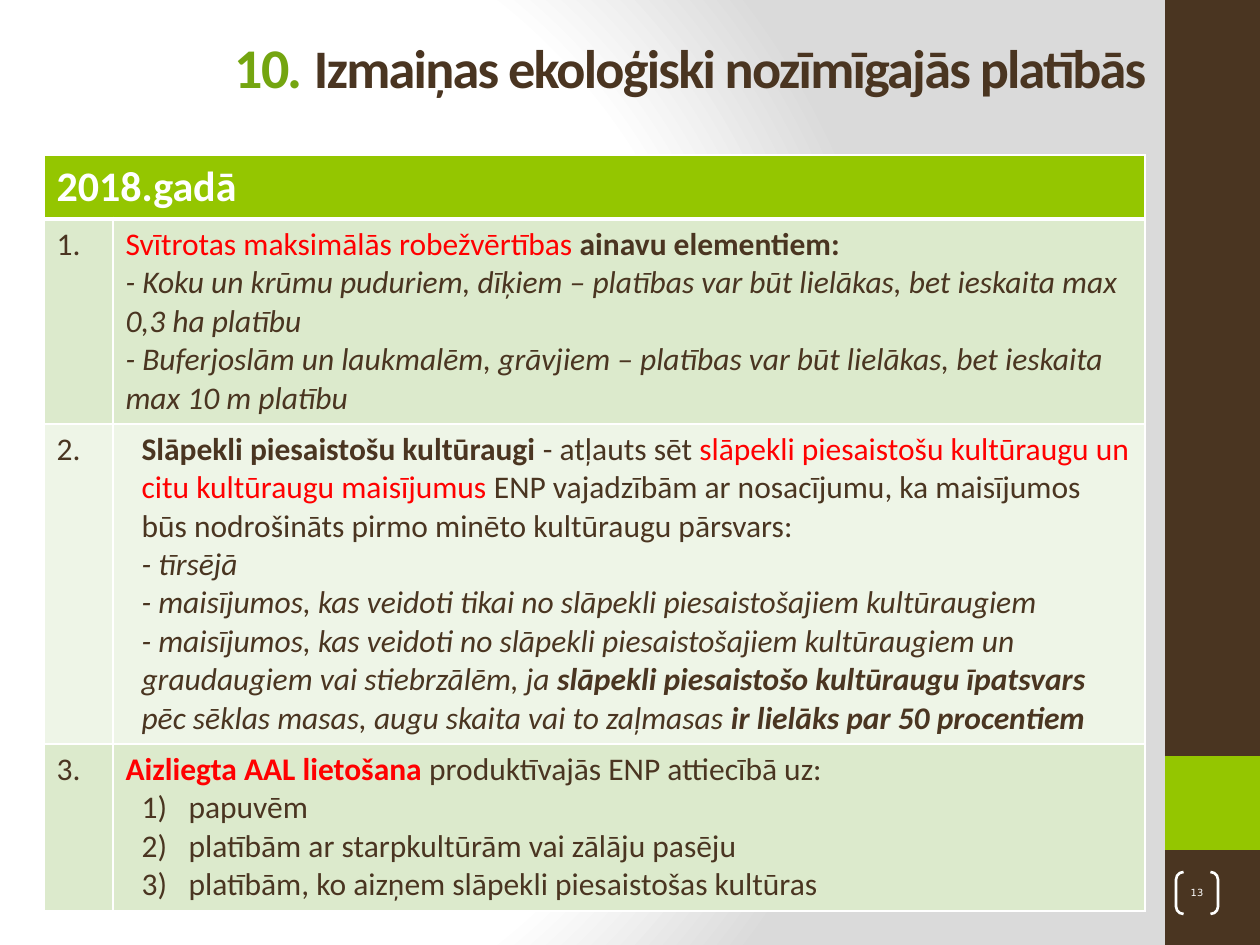
import pptx
import pptx.util
import pptx.oxml
import pptx.oxml.ns
import pptx.dml.color
import pptx.enum.shapes
import pptx.enum.text

HUES = {"brown": "4A3521", "lime": "94C600", "green": "74A510", "white": "FFFFFF",
        "red": "FF0000", "leaf": "DCEACC", "mist": "EEF5E7", "grey": "DADADA"}
FONT = "Calibri"
SCALE = 914400 / 126
SPACE = 'xmlns:a="http://schemas.openxmlformats.org/drawingml/2006/main"'
SHAPE = pptx.enum.shapes.MSO_SHAPE
ALIGN = pptx.enum.text.PP_ALIGN
ANCHOR = pptx.enum.text.MSO_ANCHOR


def px(n):
    return pptx.util.Emu(round(n * SCALE))


def rgb(name):
    return pptx.dml.color.RGBColor.from_string(HUES[name])


def parse(text):
    return pptx.oxml.parse_xml(text)


class Page:
    def __init__(self, deck):
        self.slide = deck.slides.add_slide(deck.slide_layouts[5])
        self.shapes = self.slide.shapes

    def ground(self, stops):
        self.slide.background.fill.solid()
        holder = self.slide.element.find(".//" + pptx.oxml.ns.qn("p:bgPr"))
        marks = "".join(f'<a:gs pos="{at * 1000}"><a:srgbClr val="{HUES[hue]}"/></a:gs>'
                        for at, hue in stops)
        fill = parse(f'<a:gradFill {SPACE} rotWithShape="1"><a:gsLst>{marks}</a:gsLst>'
                     '<a:path path="circle"><a:fillToRect l="20000" t="50000" '
                     'r="100000" b="50000"/></a:path></a:gradFill>')
        holder.replace(holder[0], fill)

    def run(self, para, text, hue="brown", size=18, style="", font=FONT):
        piece = para.add_run()
        piece.text = text
        face = piece.font
        face.name, face.size = font, pptx.util.Pt(size)
        face.bold, face.italic = "b" in style, "i" in style
        face.color.rgb = rgb(hue)
        return piece

    def block(self, box, hue):
        shape = self.shapes.add_shape(SHAPE.RECTANGLE, *map(px, box))
        shape.shadow.inherit = False
        shape.fill.solid()
        shape.fill.fore_color.rgb = rgb(hue)
        shape.line.fill.background()

    def badge(self, box, text):
        shape = self.shapes.add_shape(SHAPE.DOUBLE_BRACKET, *map(px, box))
        shape.shadow.inherit = False
        shape.adjustments[0] = 0.18
        shape.fill.background()
        shape.line.color.rgb = rgb("white")
        shape.line.width = pptx.util.Pt(1.5)
        frame = shape.text_frame
        frame.margin_left = frame.margin_right = 0
        frame.margin_top = frame.margin_bottom = 0
        frame.vertical_anchor = ANCHOR.MIDDLE
        para = frame.paragraphs[0]
        para.alignment = ALIGN.CENTER
        self.run(para, text, "white", 5.6, font="DejaVu Sans")

    def title(self, box, runs):
        shape = self.shapes.title
        shape.left, shape.top, shape.width, shape.height = map(px, box)
        frame = shape.text_frame
        frame.word_wrap = True
        frame.vertical_anchor = ANCHOR.TOP
        para = frame.paragraphs[0]
        para.alignment = ALIGN.LEFT
        for text, hue, size in runs:
            piece = self.run(para, text, hue, size, "b")
            piece.font._element.set("spc", "-100")
        self.shapes._spTree.append(shape._element)

    def cell(self, cell, paras, hue, base=1):
        cell.fill.solid()
        cell.fill.fore_color.rgb = rgb(hue)
        props = cell._tc.get_or_add_tcPr()
        for spot, side in enumerate("LRTB"):
            width = base if side == "B" else 1
            props.insert(spot, parse(
                f'<a:ln{side} {SPACE} w="{width * 12700}"><a:solidFill>'
                f'<a:srgbClr val="{HUES["white"]}"/></a:solidFill></a:ln{side}>'))
        for spot, (kind, runs) in enumerate(paras):
            frame = cell.text_frame
            para = frame.add_paragraph() if spot else frame.paragraphs[0]
            para.alignment = ALIGN.LEFT
            trait = para._p.get_or_add_pPr()
            if kind == "inset":
                trait.set("marL", str(px(16)))
            if kind == "list":
                trait.set("marL", str(px(63)))
                trait.set("indent", str(-px(47)))
                trait.append(parse(f'<a:buFont {SPACE} typeface="+mj-lt"/>'))
                trait.append(parse(f'<a:buAutoNum {SPACE} type="arabicParenR"/>'))
            for args in runs:
                self.run(para, *args)

    def table(self, box, cols, rows, head, items):
        grid = self.shapes.add_table(len(rows), len(cols), *map(px, box)).table
        grid.horz_banding = False
        for col, wide in zip(grid.columns, cols):
            col.width = px(wide)
        for row, high in zip(grid.rows, rows):
            row.height = px(high)
        grid.cell(0, 0).merge(grid.cell(0, 1))
        self.cell(grid.cell(0, 0), [("plain", [(head, "white", 24, "b")])], "lime", 3)
        self.cell(grid.cell(0, 1), [], "lime", 3)
        for spot, paras in enumerate(items, 1):
            hue = "leaf" if spot % 2 else "mist"
            self.cell(grid.cell(spot, 0), [("plain", [(f"{spot}.",)])], hue)
            self.cell(grid.cell(spot, 1), paras, hue)


def line(text, kind="plain", style=""):
    return kind, [(text, "brown", 18, style)]


ITEMS = [
    [("plain", [("Svītrotas maksimālās robežvērtības ", "red"),
                ("ainavu elementiem:", "brown", 18, "b")]),
     line("- Koku un krūmu puduriem, dīķiem – platības var būt lielākas, "
          "bet ieskaita max 0,3 ha platību", style="i"),
     line("- Buferjoslām un laukmalēm, grāvjiem – platības var būt lielākas, "
          "bet ieskaita max 10 m platību", style="i")],
    [("inset", [("Slāpekli piesaistošu kultūraugi ", "brown", 18, "b"),
                ("- atļauts sēt ",),
                ("slāpekli piesaistošu kultūraugu un citu kultūraugu maisījumus ", "red"),
                ("ENP vajadzībām ar nosacījumu, ka maisījumos būs nodrošināts "
                 "pirmo minēto kultūraugu pārsvars:",)]),
     line("- tīrsējā", "inset", "i"),
     line("- maisījumos, kas veidoti tikai no slāpekli piesaistošajiem kultūraugiem",
          "inset", "i"),
     ("inset", [("- maisījumos, kas veidoti no slāpekli piesaistošajiem kultūraugiem un "
                 "graudaugiem vai stiebrzālēm, ja ", "brown", 18, "i"),
                ("slāpekli piesaistošo kultūraugu īpatsvars ", "brown", 18, "bi"),
                ("pēc sēklas masas, augu skaita vai to zaļmasas ", "brown", 18, "i"),
                ("ir lielāks par 50 procentiem", "brown", 18, "bi")])],
    [("plain", [("Aizliegta AAL lietošana ", "red", 18, "b"),
                ("produktīvajās ENP attiecībā uz:",)]),
     line("papuvēm", "list"),
     line("platībām ar starpkultūrām vai zālāju pasēju", "list"),
     line("platībām, ko aizņem slāpekli piesaistošas kultūras", "list")],
]


def main():
    deck = pptx.Presentation()
    deck.slide_width, deck.slide_height = px(1260), px(945)
    page = Page(deck)
    page.ground([(0, "white"), (75, "white"), (100, "grey")])
    page.block((1165, 0, 95, 945), "brown")
    page.block((1165, 756, 95, 94), "lime")
    page.badge((1176, 872, 42, 42), "13")
    page.table((44, 155, 1101, 755), (69, 1032), (64, 204, 320, 167), "2018.gadā", ITEMS)
    page.title((222, 26, 954, 142),
               [("10. ", "green", 32), ("Izmaiņas ekoloģiski nozīmīgajās platībās", "brown", 31)])
    deck.save("out.pptx")


if __name__ == "__main__":
    main()
